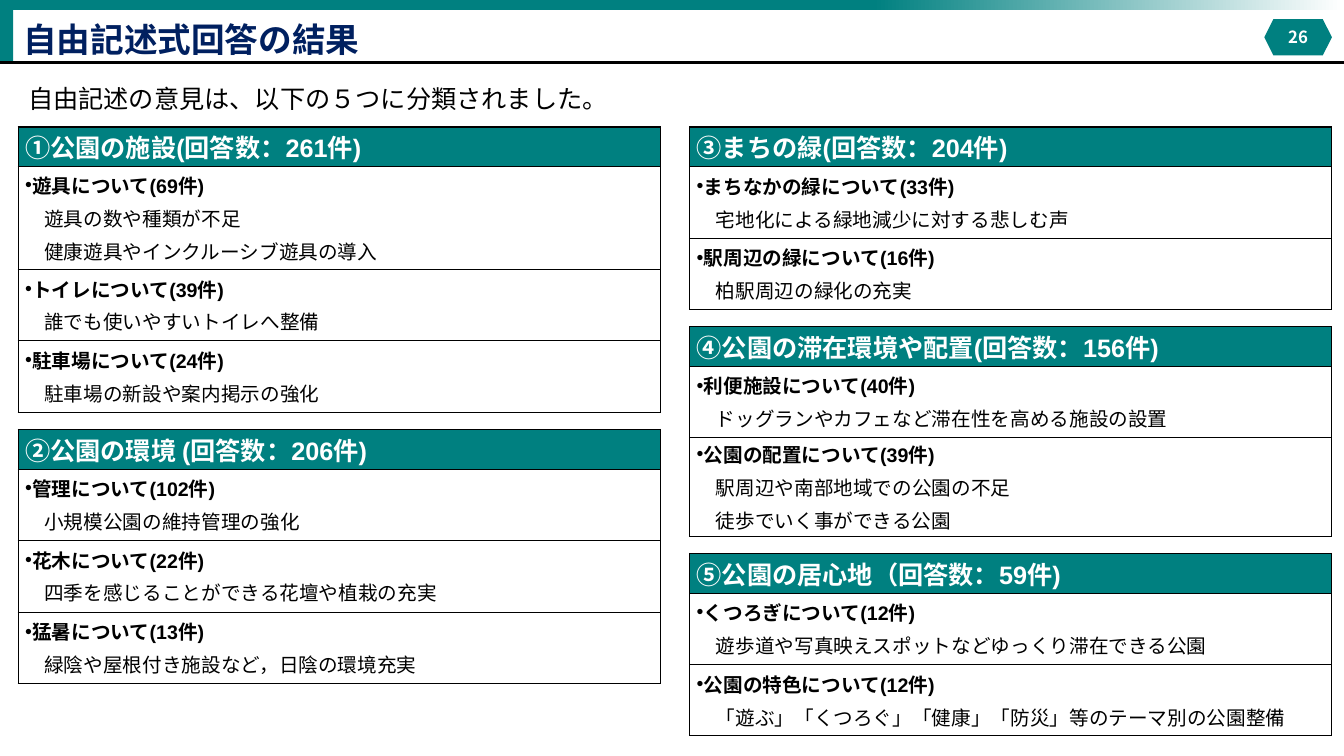
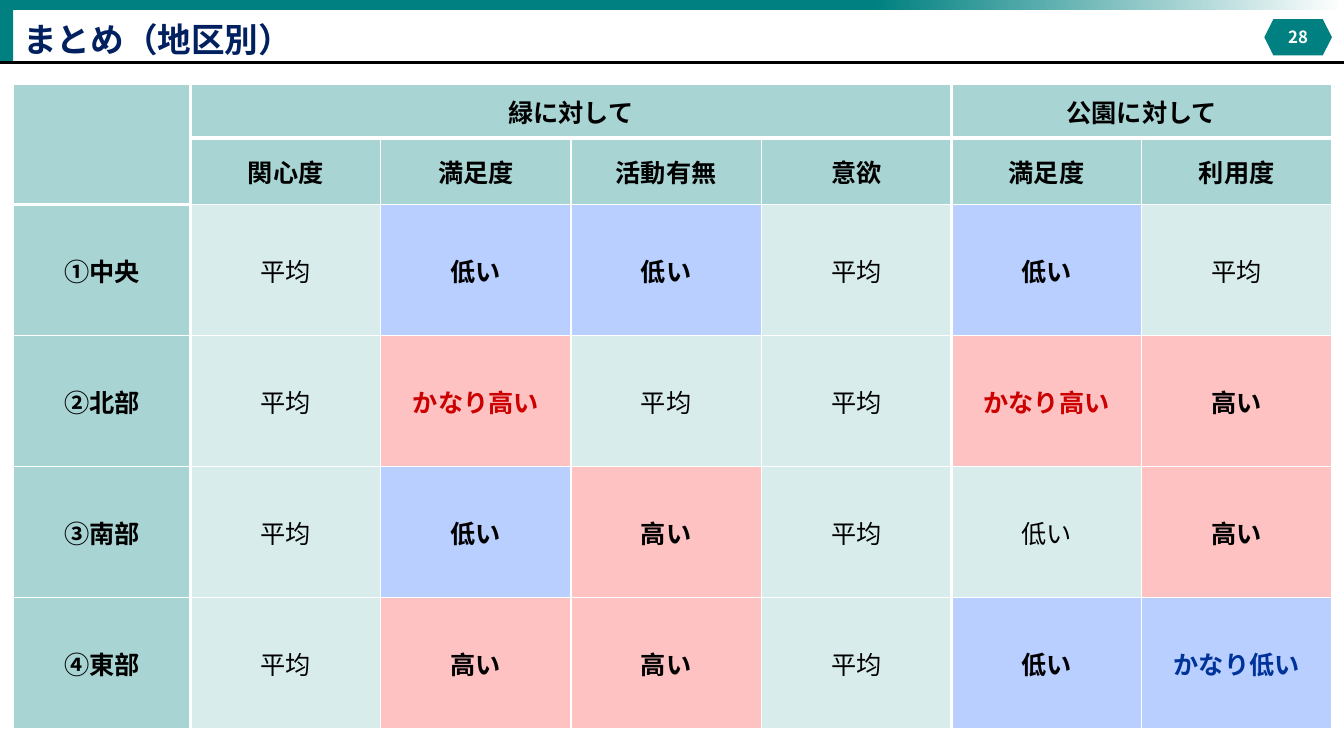
from lxml import etree
from pptx import Presentation
from pptx.dml.color import RGBColor
from pptx.enum.shapes import MSO_CONNECTOR, MSO_SHAPE
from pptx.enum.text import MSO_ANCHOR, PP_ALIGN
from pptx.oxml.ns import qn
from pptx.util import Inches, Pt

LATIN, JAPANESE = "Arial", "Noto Sans CJK JP"
TEAL, NAVY, BLACK, WHITE = "008080", "002060", "000000", "FFFFFF"
HEADER_FILL, PLAIN_FILL = "A8D4D4", "D9ECEC"
LOW_FILL, HIGH_FILL = "B8CFFF", "FFC2C2"

# Slide 1: each card is a heading and topics (row height, topic, opinions)
INTRO = "自由記述の意見は、以下の５つに分類されました。"
LEFT_CARDS = [
    ("①公園の施設(回答数：261件)", [
        (1.02, "遊具について(69件)", ["遊具の数や種類が不足", "健康遊具やインクルーシブ遊具の導入"]),
        (0.71, "トイレについて(39件)", ["誰でも使いやすいトイレへ整備"]),
        (0.71, "駐車場について(24件)", ["駐車場の新設や案内掲示の強化"]),
    ]),
    ("②公園の環境 (回答数：206件)", [
        (0.71, "管理について(102件)", ["小規模公園の維持管理の強化"]),
        (0.71, "花木について(22件)", ["四季を感じることができる花壇や植栽の充実"]),
        (0.71, "猛暑について(13件)", ["緑陰や屋根付き施設など，日陰の環境充実"]),
    ]),
]
RIGHT_CARDS = [
    ("③まちの緑(回答数：204件)", [
        (0.71, "まちなかの緑について(33件)", ["宅地化による緑地減少に対する悲しむ声"]),
        (0.71, "駅周辺の緑について(16件)", ["柏駅周辺の緑化の充実"]),
    ]),
    ("④公園の滞在環境や配置(回答数：156件)", [
        (0.71, "利便施設について(40件)", ["ドッグランやカフェなど滞在性を高める施設の設置"]),
        (0.98, "公園の配置について(39件)", ["駅周辺や南部地域での公園の不足", "徒歩でいく事ができる公園"]),
    ]),
    ("⑤公園の居心地（回答数：59件)", [
        (0.71, "くつろぎについて(12件)", ["遊歩道や写真映えスポットなどゆっくり滞在できる公園"]),
        (0.71, "公園の特色について(12件)", ["「遊ぶ」「くつろぐ」「健康」「防災」等のテーマ別の公園整備"]),
    ]),
]
CARD_TOP, CARD_WIDTH, CARD_GAP, HEADING_HEIGHT = 1.26, 6.37, 0.17, 0.39

# Slide 2: grade -> (wording, fill, text colour, bold)
GRADES = {
    "average": ("平均", PLAIN_FILL, BLACK, False),
    "slightly low": ("低い", PLAIN_FILL, BLACK, False),
    "low": ("低い", LOW_FILL, BLACK, True),
    "very low": ("かなり低い", LOW_FILL, "003399", True),
    "high": ("高い", HIGH_FILL, BLACK, True),
    "very high": ("かなり高い", HIGH_FILL, "CC0000", True),
}
GROUPS = [("緑に対して", 1, 4), ("公園に対して", 5, 6)]  # name, first and last column
MEASURES = ["関心度", "満足度", "活動有無", "意欲", "満足度", "利用度"]
DISTRICTS = [
    ("①中央", ["average", "low", "low", "average", "low", "average"]),
    ("②北部", ["average", "very high", "average", "average", "very high", "high"]),
    ("③南部", ["average", "low", "high", "average", "slightly low", "high"]),
    ("④東部", ["average", "high", "high", "average", "low", "very low"]),
]
SUMMARY_WIDTH, LABEL_WIDTH = 13.08, 1.76
SUMMARY_ROWS = [0.53, 0.66] + [1.3] * len(DISTRICTS)


def rgb(color):
    return RGBColor.from_string(color)


def add_run(paragraph, text, size, color=BLACK, bold=False, latin=LATIN):
    run = paragraph.add_run()
    run.text = text
    font = run.font
    font.size, font.bold, font.name = Pt(size), bold, latin
    font.color.rgb = rgb(color)
    east_asian = etree.SubElement(run._r.get_or_add_rPr(), qn("a:ea"))
    east_asian.set("typeface", JAPANESE)


def indent(paragraph, left, bullet=False):
    properties = paragraph._p.get_or_add_pPr()
    properties.set("marL", str(Inches(left)))
    if bullet:
        properties.set("indent", str(-Inches(left)))
        etree.SubElement(properties, qn("a:buFont")).set("typeface", LATIN)
        etree.SubElement(properties, qn("a:buChar")).set("char", "•")


def add_block(slide, kind, left, top, width, height):
    shape = slide.shapes.add_shape(kind, Inches(left), Inches(top), Inches(width), Inches(height))
    shape.shadow.inherit = False
    shape.line.fill.background()
    shape.fill.solid()
    shape.fill.fore_color.rgb = rgb(TEAL)
    return shape


def add_frame(presentation, title, number):
    """Add a slide with the shared title, bands, rule and page badge."""
    slide = presentation.slides.add_slide(presentation.slide_layouts[5])

    # Top band fading to white, and the side band
    band = add_block(slide, MSO_SHAPE.RECTANGLE, 0, -0.02, 13.33, 0.12)
    band.fill.gradient()
    band.fill.gradient_angle = 0
    for stop, position, color in zip(band.fill.gradient_stops, (0.65, 1), (TEAL, WHITE)):
        stop.position = position
        stop.color.rgb = rgb(color)
    add_block(slide, MSO_SHAPE.RECTANGLE, 0, 0.08, 0.13, 0.54)

    # Rule under the title
    rule = slide.shapes.add_connector(
        MSO_CONNECTOR.STRAIGHT, 0, Inches(0.62), presentation.slide_width, Inches(0.62))
    rule.line.color.rgb = rgb(BLACK)
    rule.line.width = Pt(1.5)
    etree.SubElement(rule._element.spPr, qn("a:effectLst"))

    # Title
    heading = slide.shapes.title
    heading.left, heading.top = Inches(0.13), Inches(0.14)
    heading.width, heading.height = Inches(12), Inches(0.5)
    heading.text_frame.vertical_anchor = MSO_ANCHOR.TOP
    paragraph = heading.text_frame.paragraphs[0]
    paragraph.alignment = PP_ALIGN.LEFT
    add_run(paragraph, title, 24, NAVY, True)

    # Page badge
    badge = add_block(slide, MSO_SHAPE.HEXAGON, 12.54, 0.19, 0.67, 0.36)
    frame = badge.text_frame
    frame.margin_left = frame.margin_right = frame.margin_top = frame.margin_bottom = 0
    frame.vertical_anchor = MSO_ANCHOR.MIDDLE
    frame.paragraphs[0].alignment = PP_ALIGN.CENTER
    add_run(frame.paragraphs[0], number, 12, WHITE, True, JAPANESE)
    return slide


def add_table(slide, left, top, widths, heights):
    frame = slide.shapes.add_table(
        len(heights), len(widths), Inches(left), Inches(top),
        Inches(sum(widths)), Inches(sum(heights)))
    table = frame.table
    table.first_row = table.horz_banding = False
    for column, width in zip(table.columns, widths):
        column.width = Inches(width)
    for row, height in zip(table.rows, heights):
        row.height = Inches(height)
    return table


def style_cell(cell, fill, border, left=1, right=1, top=1, bottom=1):
    """Set border widths in points, then the fill."""
    properties = cell._tc.get_or_add_tcPr()
    for side, width in zip("LRTB", (left, right, top, bottom)):
        line = etree.SubElement(properties, qn("a:ln" + side), w=str(Pt(width)))
        solid = etree.SubElement(line, qn("a:solidFill"))
        etree.SubElement(solid, qn("a:srgbClr"), val=border)
    cell.fill.solid()
    cell.fill.fore_color.rgb = rgb(fill)
    cell.vertical_anchor = MSO_ANCHOR.MIDDLE


def add_card(slide, left, top, heading, topics):
    heights = [HEADING_HEIGHT] + [height for height, _, _ in topics]
    table = add_table(slide, left, top, [CARD_WIDTH], heights)
    for index in range(len(heights)):
        cell = table.cell(index, 0)
        cell.margin_left = cell.margin_right = Inches(0.07)
        cell.margin_top = cell.margin_bottom = 0
        style_cell(cell, WHITE if index else TEAL, BLACK,
                   top=0.25 if index else 1,
                   bottom=1 if index == len(topics) else 0.25)
        frame = cell.text_frame
        paragraph = frame.paragraphs[0]
        if index == 0:
            add_run(paragraph, heading, 18, WHITE, True)
            continue
        _, topic, opinions = topics[index - 1]
        indent(paragraph, 0.07, bullet=True)
        add_run(paragraph, topic, 14, bold=True)
        for opinion in opinions:
            paragraph = frame.add_paragraph()
            indent(paragraph, 0.19)
            paragraph.space_before = Pt(3)
            add_run(paragraph, opinion, 14)
    return sum(heights)


def build_opinions(presentation):
    slide = add_frame(presentation, "自由記述式回答の結果", "26")
    intro = slide.shapes.add_textbox(Inches(0.18), Inches(0.78), Inches(10.58), Inches(0.4))
    intro.text_frame.word_wrap = True
    add_run(intro.text_frame.paragraphs[0], INTRO, 18)
    for left, cards in ((0.18, LEFT_CARDS), (6.84, RIGHT_CARDS)):
        top = CARD_TOP
        for heading, topics in cards:
            top += add_card(slide, left, top, heading, topics) + CARD_GAP


def build_summary(presentation):
    slide = add_frame(presentation, "まとめ（地区別）", "28")
    measure_width = (SUMMARY_WIDTH - LABEL_WIDTH) / len(MEASURES)
    widths = [LABEL_WIDTH] + [measure_width] * len(MEASURES)
    table = add_table(slide, 0.13, 0.84, widths, SUMMARY_ROWS)

    # Merged headers
    table.cell(0, 0).merge(table.cell(1, 0))
    for _, first, last in GROUPS:
        table.cell(0, first).merge(table.cell(0, last))

    # Cell contents: (row, column) -> (text, fill, colour, bold, font)
    contents = {(0, first): (name, HEADER_FILL, BLACK, True, JAPANESE) for name, first, _ in GROUPS}
    for column, measure in enumerate(MEASURES, 1):
        contents[1, column] = (measure, HEADER_FILL, BLACK, True, JAPANESE)
    for row, (district, grades) in enumerate(DISTRICTS, 2):
        contents[row, 0] = (district, HEADER_FILL, BLACK, True, LATIN)
        for column, grade in enumerate(grades, 1):
            contents[row, column] = (*GRADES[grade], JAPANESE)

    # Thick rules set off the label column, the two groups and the top header
    for row in range(len(SUMMARY_ROWS)):
        for column in range(len(widths)):
            cell = table.cell(row, column)
            text, fill, color, bold, latin = contents.get(
                (row, column), ("", HEADER_FILL, BLACK, True, JAPANESE))
            style_cell(cell, fill, WHITE,
                       left=3 if column in (1, 5) else 1,
                       right=3 if column in (0, 4) or (row, column) == (0, 1) else 1,
                       bottom=3 if row == 0 or (row, column) == (1, 0) else 1)
            if text:
                paragraph = cell.text_frame.paragraphs[0]
                paragraph.alignment = PP_ALIGN.CENTER
                add_run(paragraph, text, 18, color, bold, latin)


def main():
    presentation = Presentation()
    presentation.slide_width, presentation.slide_height = Inches(13.33), Inches(7.5)
    build_opinions(presentation)
    build_summary(presentation)
    presentation.save("out.pptx")


if __name__ == "__main__":
    main()
